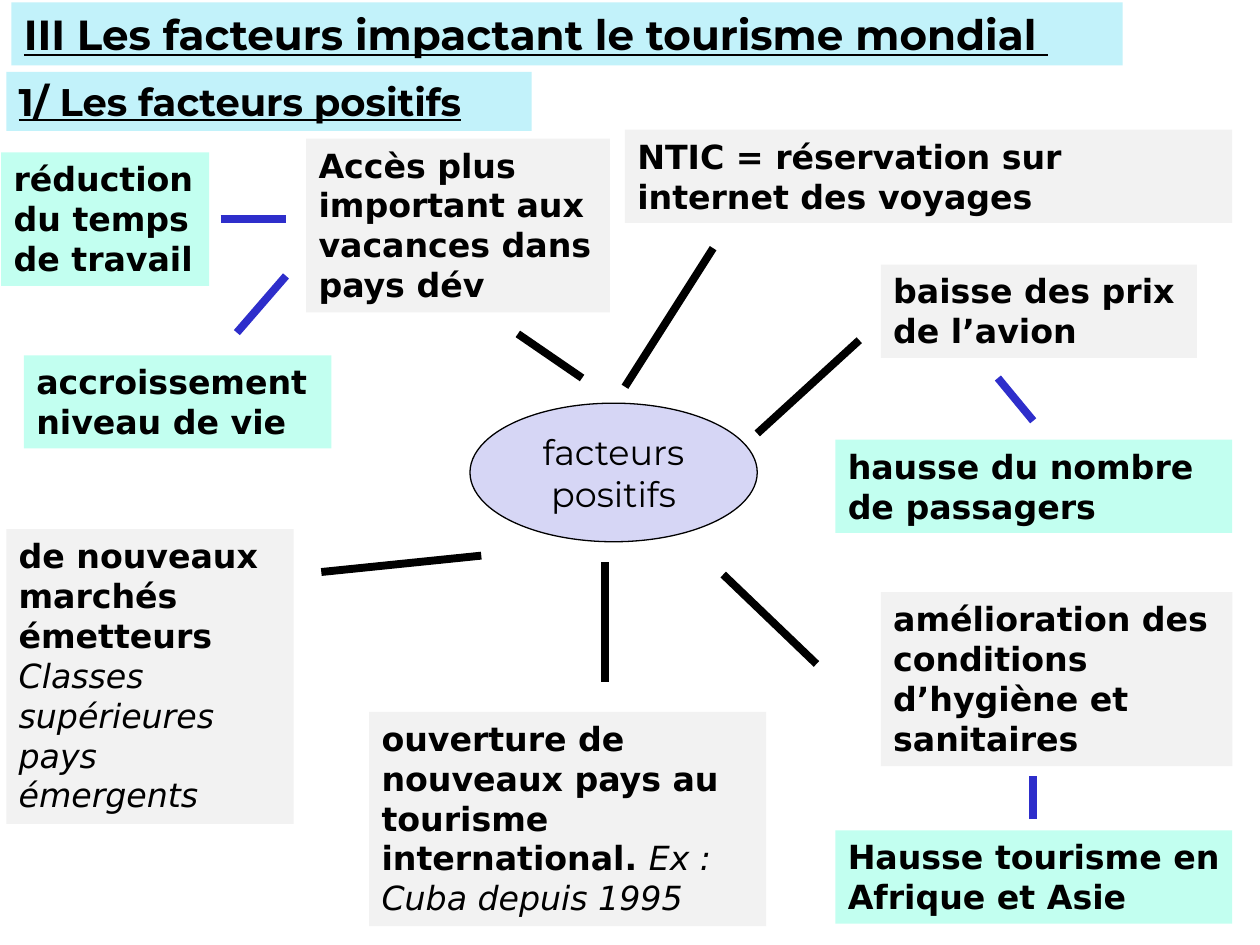
from lxml import etree
from pptx import Presentation
from pptx.dml.color import RGBColor
from pptx.enum.shapes import MSO_CONNECTOR, MSO_SHAPE
from pptx.enum.text import MSO_ANCHOR, MSO_AUTO_SIZE, PP_ALIGN
from pptx.oxml.ns import qn
from pptx.util import Inches, Pt

RECT, OVAL = MSO_SHAPE.RECTANGLE, MSO_SHAPE.OVAL
STRAIGHT = MSO_CONNECTOR.STRAIGHT
TOP, MIDDLE = MSO_ANCHOR.TOP, MSO_ANCHOR.MIDDLE
GROW, FIXED = MSO_AUTO_SIZE.SHAPE_TO_FIT_TEXT, MSO_AUTO_SIZE.NONE
LEFT, CENTER, JUSTIFY = PP_ALIGN.LEFT, PP_ALIGN.CENTER, PP_ALIGN.JUSTIFY

BLACK = RGBColor(0x00, 0x00, 0x00)
BLUE = RGBColor(0x2E, 0x2E, 0xCB)
LAVENDER = RGBColor(0xD6, 0xD6, 0xF5)
GREY = RGBColor(0xF2, 0xF2, 0xF2)
MINT = RGBColor(0xC2, 0xFF, 0xF0)
SKY = RGBColor(0xC2, 0xF2, 0xFA)

COLUMNS, ROWS = 100, 75
BOLD = {"name": "DejaVu Sans", "size": Pt(19), "bold": True}
ITALIC = {**BOLD, "bold": False, "italic": True}
HUB = {"name": "Montserrat", "size": Pt(20)}
SUBTITLE = {"name": "Montserrat", "size": Pt(22), "bold": True, "underline": True}
TITLE = {**SUBTITLE, "size": Pt(24)}

FACTORS = [
    ((24.3, 11, 24.1, 13.8), [[("Accès plus important aux vacances dans pays dév", BOLD)]]),
    ((0.5, 42, 22.8, 23.4), [[("de nouveaux marchés émetteurs", BOLD)],
                             [("Classes supérieures pays émergents", ITALIC)]]),
    ((29.3, 56.5, 31.5, 17), [[("ouverture de nouveaux pays au tourisme international. ", BOLD),
                               ("Ex : Cuba depuis 1995", ITALIC)]]),
    ((49.6, 10.3, 48.2, 7.4), [[("NTIC = réservation sur internet des voyages", BOLD)]]),
    ((69.9, 21, 25.1, 7.4), [[("baisse des prix de l’avion", BOLD)]]),
    ((69.9, 47, 27.9, 13.8), [[("amélioration des conditions d’hygiène et sanitaires", BOLD)]]),
]
DETAILS = [
    ((0.1, 12.1, 16.5, 10.6), "réduction du temps de travail"),
    ((1.9, 28.2, 24.4, 7.4), "accroissement niveau de vie"),
    ((66.3, 34.9, 31.5, 7.4), "hausse du nombre de passagers"),
    ((66.3, 65.9, 31.5, 7.4), "Hausse tourisme en Afrique et Asie"),
]
HUB_LINKS = [
    (41.1, 26.5, 46.2, 30), (48, 54.1, 48, 44.6), (25.5, 45.4, 38.2, 44.1),
    (56.6, 19.7, 49.6, 30.7), (57.4, 45.6, 64.8, 52.7), (60.1, 34.4, 68.2, 27),
]
DETAIL_LINKS = [
    (18.8, 26.4, 22.7, 21.9), (17.5, 17.4, 22.7, 17.4),
    (82, 33.4, 79.2, 30), (82, 65, 82, 61.6),
]


class MindMap:
    """Draws boxes and links on a grid of columns and rows."""

    def __init__(self, prs):
        self.slide = prs.slides.add_slide(prs.slide_layouts[6])
        self.column = prs.slide_width / COLUMNS
        self.row = prs.slide_height / ROWS

    def place(self, cells):
        units = (self.column, self.row) * 2
        return [round(n * unit) for n, unit in zip(cells, units)]

    def box(self, cells, fill, paragraphs, align=LEFT, shape=RECT, anchor=TOP, fit=GROW):
        sp = self.slide.shapes.add_shape(shape, *self.place(cells))
        sp.shadow.inherit = False
        sp.fill.solid()
        sp.fill.fore_color.rgb = fill
        sp.line.fill.background()
        tf = sp.text_frame
        layout = {"word_wrap": True, "auto_size": fit, "vertical_anchor": anchor}
        for key, value in layout.items():
            setattr(tf, key, value)
        for i, runs in enumerate(paragraphs):
            p = tf.add_paragraph() if i else tf.paragraphs[0]
            p.alignment = align
            for text, style in runs:
                self.run(p, text, style)
        return sp

    def run(self, p, text, style):
        r = p.add_run()
        r.text = text
        r.font.color.rgb = BLACK
        for key, value in style.items():
            setattr(r.font, key, value)

    def hub(self, cells, text):
        sp = self.box(cells, LAVENDER, [[(text, HUB)]], CENTER, OVAL, MIDDLE, FIXED)
        sp.line.color.rgb = BLACK
        sp.line.width = Pt(0.75)

    def link(self, ends, color):
        cxn = self.slide.shapes.add_connector(STRAIGHT, *self.place(ends))
        cxn.line.color.rgb = color
        cxn.line.width = Pt(4.5)
        etree.SubElement(cxn._element.spPr, qn("a:effectLst"))


def main():
    prs = Presentation()
    prs.slide_width, prs.slide_height = Inches(10), Inches(7.5)
    s = MindMap(prs)
    s.hub((37.3, 32, 22.8, 11), "facteurs positifs")
    for links, color in ((HUB_LINKS, BLACK), (DETAIL_LINKS, BLUE)):
        for ends in links:
            s.link(ends, color)
    for cells, paragraphs in FACTORS:
        s.box(cells, GREY, paragraphs)
    for cells, text in DETAILS:
        s.box(cells, MINT, [[(text, BOLD)]])
    s.box((0.5, 5.7, 41.7, 4.7), SKY, [[("1/ Les facteurs positifs", SUBTITLE)]], JUSTIFY)
    s.box((0.9, 0.2, 88.2, 5), SKY,
          [[("III Les facteurs impactant le tourisme mondial ", TITLE)]], JUSTIFY)
    prs.save("out.pptx")


if __name__ == "__main__":
    main()
